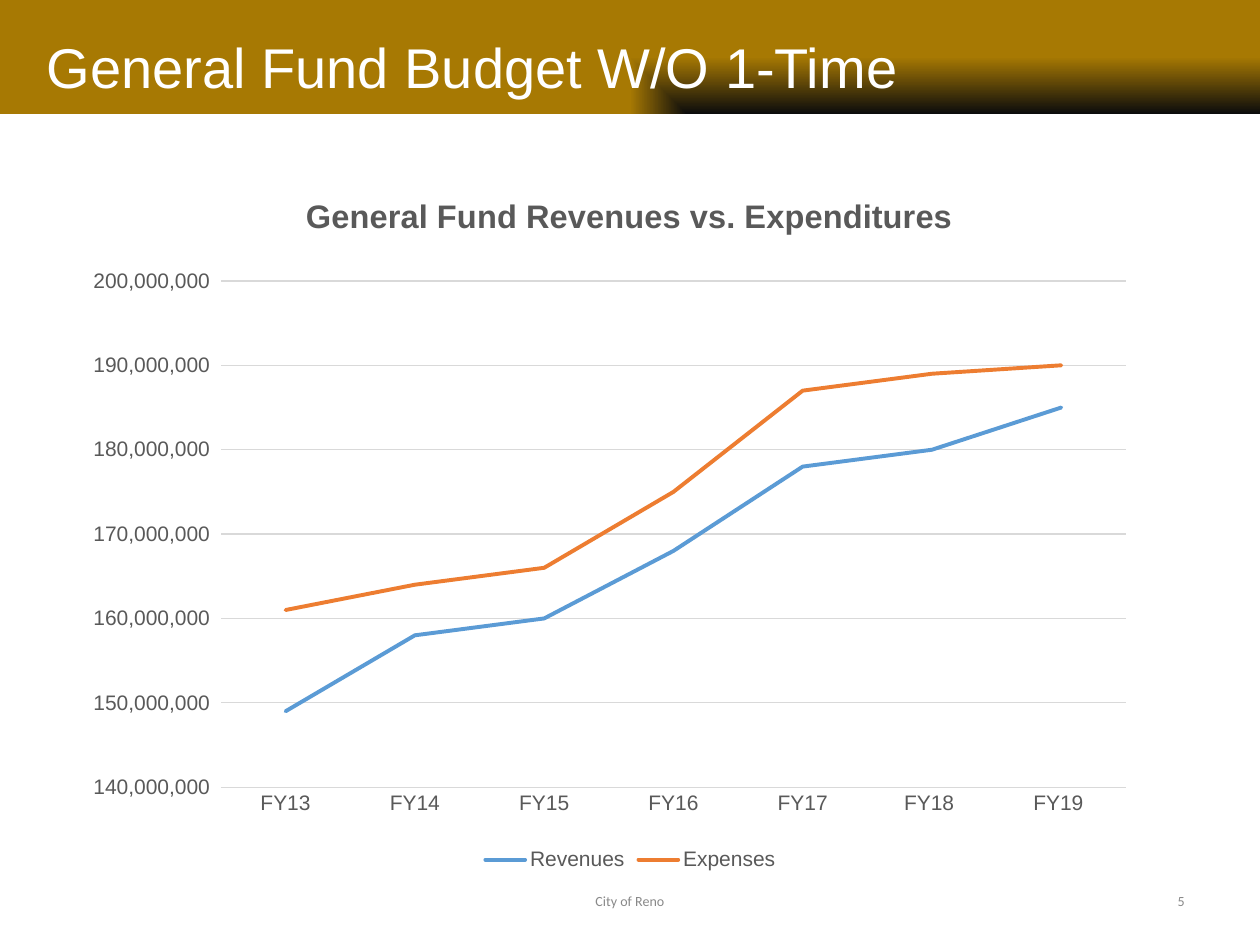
from lxml import etree
from pptx import Presentation
from pptx.chart.data import CategoryChartData
from pptx.dml.color import RGBColor
from pptx.enum.chart import XL_CHART_TYPE, XL_LEGEND_POSITION, XL_TICK_MARK
from pptx.enum.shapes import MSO_SHAPE
from pptx.enum.text import MSO_ANCHOR, MSO_AUTO_SIZE, PP_ALIGN
from pptx.oxml import parse_xml
from pptx.oxml.ns import nsdecls, qn
from pptx.util import Pt

LEFT, CENTER, RIGHT = PP_ALIGN.LEFT, PP_ALIGN.CENTER, PP_ALIGN.RIGHT
MIDDLE = MSO_ANCHOR.MIDDLE
NO_FIT = MSO_AUTO_SIZE.NONE
NO_TICK = XL_TICK_MARK.NONE
LINE = XL_CHART_TYPE.LINE
BOTTOM = XL_LEGEND_POSITION.BOTTOM
RECT = MSO_SHAPE.RECTANGLE

WHITE = RGBColor(0xFF, 0xFF, 0xFF)
GRAY = RGBColor(0x89, 0x89, 0x89)
DARK = RGBColor(0x59, 0x59, 0x59)
GRID = RGBColor(0xD9, 0xD9, 0xD9)
BLUE = RGBColor(0x5B, 0x9B, 0xD5)
ORANGE = RGBColor(0xED, 0x7D, 0x31)
BLACK = RGBColor(0x0C, 0x0C, 0x0C)
GOLD = RGBColor(0xA7, 0x79, 0x03)


def write(frame, text, size, color, font="Arial", align=LEFT, bold=False):
    para = frame.paragraphs[0]
    para.alignment = align
    run = para.add_run()
    run.text = text
    run.font.name = font
    run.font.size = Pt(size)
    run.font.bold = bold
    run.font.color.rgb = color


def place(parent, index, **parts):
    """Give a chart part a fixed layout, as shares of the chart's size."""
    old = parent.find(qn("c:layout"))
    if old is not None:
        parent.remove(old)
    layout = etree.Element(qn("c:layout"))
    manual = etree.SubElement(layout, qn("c:manualLayout"))
    for tag, val in parts.items():
        etree.SubElement(manual, qn("c:" + tag)).set("val", str(val))
    parent.insert(index, layout)


prs = Presentation()
prs.slide_width, prs.slide_height = Pt(720), Pt(540)
slide = prs.slides.add_slide(prs.slide_layouts[5])
shapes = slide.shapes

# Header band, behind the title
band = shapes.add_shape(RECT, 0, 0, Pt(720), Pt(65))
band.shadow.inherit = False
band.line.fill.background()
band.fill.background()
props = band._element.spPr
fill = parse_xml(
    f'<a:gradFill {nsdecls("a")} rotWithShape="1"><a:gsLst>'
    f'<a:gs pos="0"><a:srgbClr val="{BLACK}"/></a:gs>'
    f'<a:gs pos="100000"><a:srgbClr val="{GOLD}"/></a:gs></a:gsLst>'
    '<a:path path="rect"><a:fillToRect l="100000" t="100000"/></a:path>'
    '</a:gradFill>')
props.replace(props.find(qn("a:noFill")), fill)
shapes._spTree.insert(2, band._element)

title = shapes.title
title.left, title.top = Pt(19.5), Pt(9.5)
title.width, title.height = Pt(562), Pt(56)
title.text_frame.auto_size = NO_FIT
title.text_frame.vertical_anchor = MIDDLE
write(title.text_frame, "General Fund Budget W/O 1-Time", 32, WHITE)

# Revenue and expense lines, in millions
data = CategoryChartData()
data.categories = ["FY13", "FY14", "FY15", "FY16", "FY17", "FY18 ", "FY19 "]
series = [
    ("Revenues", BLUE, [149, 158, 160, 168, 178, 180, 185]),
    ("Expenses", ORANGE, [161, 164, 166, 175, 187, 189, 190]),
]
for name, color, vals in series:
    data.add_series(name, [val * 1_000_000 for val in vals])
chart = shapes.add_chart(
    LINE, Pt(32.5), Pt(96), Pt(655.5), Pt(404.5), data).chart
chart.font.name = "Arial"
chart.font.size = Pt(12)
chart.font.color.rgb = DARK

chart.has_title = True
head = chart.chart_title
write(head.text_frame, "General Fund Revenues vs. Expenditures", 18.6, DARK,
      align=CENTER, bold=True)
head.include_in_layout = False
place(head._element, 1, xMode="edge", yMode="edge", x=0.212, y=0.029)
place(chart._chartSpace.chart.plotArea, 0, layoutTarget="inner",
      xMode="edge", yMode="edge", x=0.143, y=0.1, w=0.789, h=0.775)

chart.has_legend = True
chart.legend.position = BOTTOM
chart.legend.include_in_layout = False

chart.plots[0].vary_by_categories = False
for line, (name, color, vals) in zip(chart.plots[0].series, series):
    line.smooth = False
    line.format.line.color.rgb = color
    line.format.line.width = Pt(2.25)
    line.format.line._ln.set("cap", "rnd")

years, money = chart.category_axis, chart.value_axis
for axis in (years, money):
    axis.major_tick_mark = axis.minor_tick_mark = NO_TICK
money.minimum_scale = 140_000_000
money.maximum_scale = 205_000_000
money.major_unit = 10_000_000
money.tick_labels.number_format = (
    r'_(* #,##0_);_(* \(#,##0\);_(* "-"??_);_(@_)')
money.tick_labels.number_format_is_linked = False
money.format.line.fill.background()
money.has_major_gridlines = True
for rule in (years.format.line, money.major_gridlines.format.line):
    rule.color.rgb = GRID
    rule.width = Pt(0.75)

# Footer and slide number
for text, left, width, align in [("City of Reno", 246, 228, CENTER),
                                 ("5", 516, 168, RIGHT)]:
    frame = shapes.add_textbox(
        Pt(left), Pt(500.5), Pt(width), Pt(28.75)).text_frame
    frame.word_wrap = True
    frame.vertical_anchor = MIDDLE
    write(frame, text, 8, GRAY, font="Calibri", align=align)

prs.save("out.pptx")
